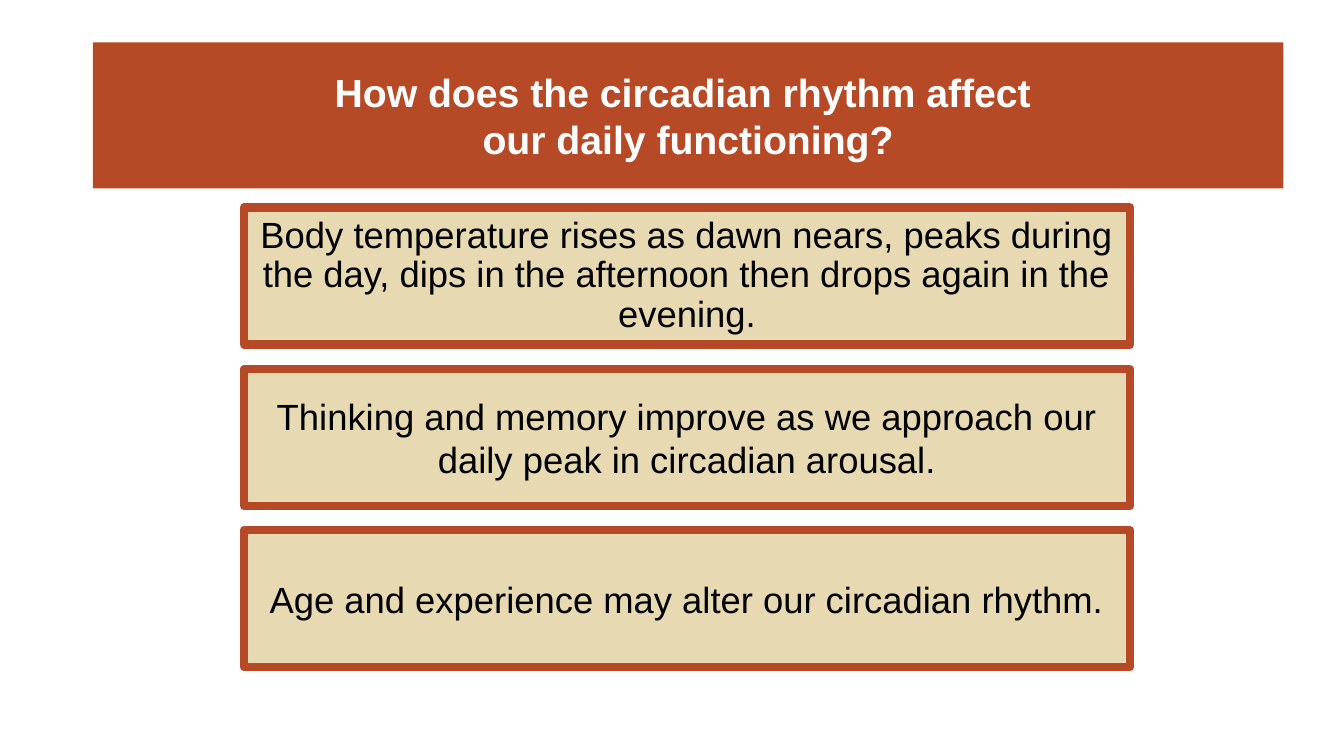
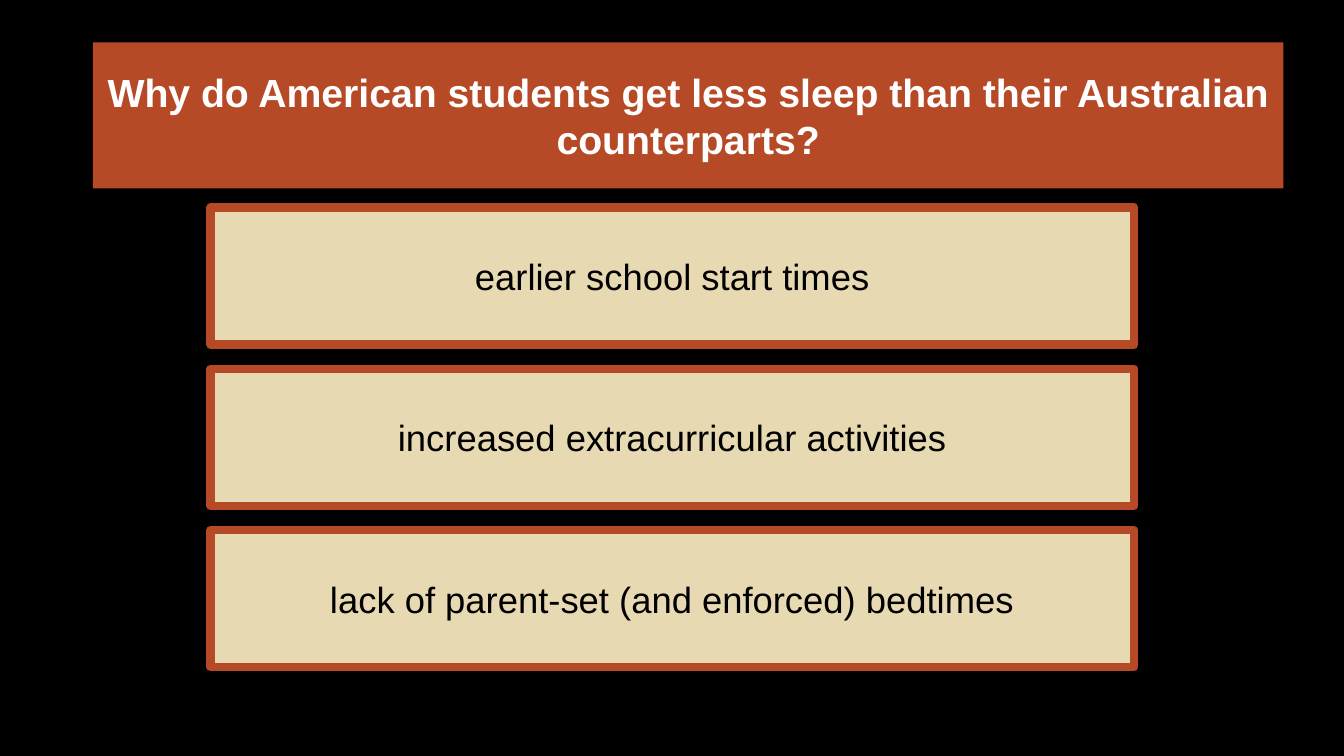
import pptx
import pptx.util
import pptx.dml.color
import pptx.enum.shapes
import pptx.enum.text

RUST = pptx.dml.color.RGBColor(0xB6, 0x49, 0x26)
SAND = pptx.dml.color.RGBColor(0xE7, 0xD9, 0xB1)
WHITE = pptx.dml.color.RGBColor(0xFF, 0xFF, 0xFF)
BLACK = pptx.dml.color.RGBColor(0x00, 0x00, 0x00)

# Title band and answer rows, in inches
TITLE_BOX = (0.92, 0.42, 11.81, 1.45)
ROW_TOP, ROW_PITCH, ROW_HEIGHT = 2.06, 1.6, 1.36

TITLE_FONT = {"name": "Arial", "size": pptx.util.Pt(28), "bold": True}
ANSWER_FONT = {"name": "Arial", "size": pptx.util.Pt(26), "bold": False}

# Each answer is its text and line spacing
SLIDES = [
    {
        "title": "How does the circadian rhythm affect \vour daily functioning?",
        "background": WHITE,
        "left": 2.42,
        "width": 8.79,
        "answers": [
            ("Body temperature rises as dawn nears, peaks during the day, "
             "dips in the afternoon then drops again in the evening.", 0.9),
            ("Thinking and memory improve as we approach our daily peak "
             "in circadian arousal.", 1.0),
            ("Age and experience may alter our circadian rhythm.", 1.0),
        ],
    },
    {
        "title": "Why do American students get less sleep than their "
                 "Australian counterparts?",
        "background": BLACK,
        "left": 2.09,
        "width": 9.16,
        "answers": [
            ("earlier school start times", 1.0),
            ("increased extracurricular activities", 1.0),
            ("lack of parent-set (and enforced) bedtimes", 1.0),
        ],
    },
]


def fill_box(sp, text, fill, font, color, spacing=1.0):
    """Fill a box and centre its text."""
    sp.fill.solid()
    sp.fill.fore_color.rgb = fill
    tf = sp.text_frame
    tf.word_wrap = True
    tf.auto_size = pptx.enum.text.MSO_AUTO_SIZE.NONE
    tf.vertical_anchor = pptx.enum.text.MSO_ANCHOR.MIDDLE
    p = tf.paragraphs[0]
    p.text = text
    p.alignment = pptx.enum.text.PP_ALIGN.CENTER
    p.line_spacing = spacing
    for r in p.runs:
        for key, value in font.items():
            setattr(r.font, key, value)
        r.font.color.rgb = color


prs = pptx.Presentation()
prs.slide_width = pptx.util.Inches(13.33)
prs.slide_height = pptx.util.Inches(7.5)

for content in SLIDES:
    s = prs.slides.add_slide(prs.slide_layouts.get_by_name("Title Only"))
    s.background.fill.solid()
    s.background.fill.fore_color.rgb = content["background"]

    # Title band
    title = s.shapes.title
    for side, value in zip(("left", "top", "width", "height"), TITLE_BOX):
        setattr(title, side, pptx.util.Inches(value))
    fill_box(title, content["title"], RUST, TITLE_FONT, WHITE)

    # Answer boxes
    for row, (text, spacing) in enumerate(content["answers"]):
        box = (content["left"], ROW_TOP + row * ROW_PITCH,
               content["width"], ROW_HEIGHT)
        sp = s.shapes.add_shape(pptx.enum.shapes.MSO_SHAPE.RECTANGLE,
                                *map(pptx.util.Inches, box))
        sp.shadow.inherit = False
        sp.line.color.rgb = RUST
        sp.line.width = pptx.util.Pt(6)
        fill_box(sp, text, SAND, ANSWER_FONT, BLACK, spacing)

prs.save("out.pptx")
